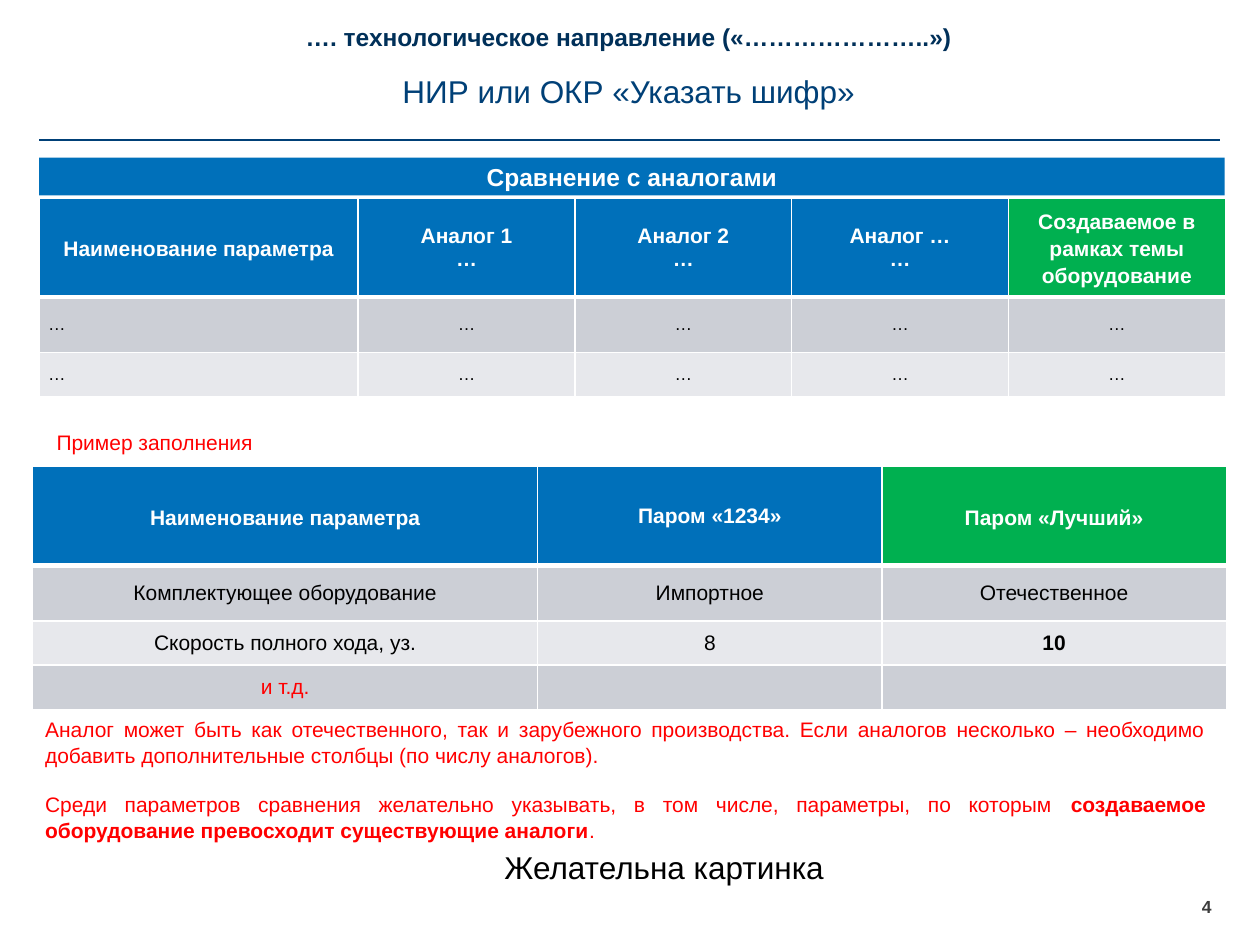
from lxml import etree
from pptx import Presentation
from pptx.dml.color import RGBColor
from pptx.enum.shapes import MSO_CONNECTOR, MSO_SHAPE
from pptx.enum.text import MSO_ANCHOR, PP_ALIGN
from pptx.oxml.ns import qn
from pptx.util import Cm, Pt

LEFT, MID, FULL = PP_ALIGN.LEFT, PP_ALIGN.CENTER, PP_ALIGN.JUSTIFY
TOP, CORE, BASE = MSO_ANCHOR.TOP, MSO_ANCHOR.MIDDLE, MSO_ANCHOR.BOTTOM
FONT = "Arial"
HUES = {
    "navy": "003059", "deep": "004077", "blue": "0070BA", "green": "00B050",
    "dark": "CCCFD6", "pale": "E7E8EC", "red": "FF0000", "grey": "3C3C3C",
    "black": "000000", "white": "FFFFFF",
}

# Content: a text is a list of paragraphs, a paragraph a list of (words, bold)
THEME = "…. технологическое направление («…………………..»)"
TITLE = "НИР или ОКР «Указать шифр»"
BANNER = "Сравнение с аналогами"
SAMPLE = "Пример заполнения"
NOTES = [
    [("Аналог может быть как отечественного, так и зарубежного производства. "
      "Если аналогов несколько – необходимо добавить дополнительные столбцы "
      "(по числу аналогов).", False)],
    [("Среди параметров сравнения желательно указывать, в том числе, "
      "параметры, по которым ", False),
     ("создаваемое оборудование превосходит существующие аналоги", True),
     (".", False)],
]
WISH = "Желательна картинка"
PAGE = "4"

PEERS = {
    "spot": (0.79, 3.99), "cols": [6.43] + [4.37] * 4,
    "rows": [2, 1.12, 0.89], "size": 10, "first": FULL,
    "cells": [
        ["Наименование параметра", "Аналог 1\n…", "Аналог 2\n…", "Аналог …\n…",
         "Создаваемое в рамках темы оборудование"],
        ["…"] * 5,
        ["…"] * 5,
    ],
}
FERRY = {
    "spot": (0.66, 9.4), "cols": [10.18, 6.94, 6.94],
    "rows": [2, 1.12, 0.89, 0.89], "size": 12, "first": MID,
    "cells": [
        ["Наименование параметра", "Паром «1234»", "Паром «Лучший»"],
        ["Комплектующее оборудование", "Импортное", "Отечественное"],
        ["Скорость полного хода, уз.", "8", "10"],
        ["и т.д.", "", ""],
    ],
}
BOLD = {"10"}
TINT = {"и т.д.": "red"}


def hue(name):
    return RGBColor.from_string(HUES[name])


def write(frame, paras, size, tone, align, gap=0):
    """Fill a text frame run by run; return its paragraphs."""
    for i, runs in enumerate(paras):
        para = frame.paragraphs[0] if i == 0 else frame.add_paragraph()
        para.alignment = align
        if i and gap:
            para.space_before = Pt(gap)
        for words, bold in runs:
            run = para.add_run()
            run.text = words
            font = run.font
            font.name, font.size, font.bold = FONT, Pt(size), bold
            font.color.rgb = hue(tone)
    return frame.paragraphs


def label(area, paras, size, tone, align, bold=False, anchor=TOP,
          tight=False, gap=0):
    """Add a wrapped text box."""
    frame = slide.shapes.add_textbox(*map(Cm, area)).text_frame
    frame.word_wrap = True
    frame.vertical_anchor = anchor
    if tight:
        frame.margin_left = frame.margin_right = 0
        frame.margin_top = frame.margin_bottom = 0
    if isinstance(paras, str):
        paras = [[(paras, bold)]]
    write(frame, paras, size, tone, align, gap)


def edge(cell, top, base):
    """Draw white borders, with given top and bottom widths in points."""
    props = cell._tc.get_or_add_tcPr()
    sides = [("lnL", 1), ("lnR", 1), ("lnT", top), ("lnB", base)]
    for i, (tag, width) in enumerate(sides):
        line = etree.Element(qn("a:" + tag), w=str(Pt(width)))
        fill = etree.SubElement(line, qn("a:solidFill"))
        etree.SubElement(fill, qn("a:srgbClr"), val=HUES["white"])
        props.insert(i, line)


def grid(data):
    """Add a table: a header with a green last column, then banded rows."""
    cols, rows = data["cols"], data["rows"]
    area = (*data["spot"], sum(cols), sum(rows))
    table = slide.shapes.add_table(
        len(rows), len(cols), *map(Cm, area)).table
    for col, width in zip(table.columns, cols):
        col.width = Cm(width)
    last = len(cols) - 1
    for r, texts in enumerate(data["cells"]):
        table.rows[r].height = Cm(rows[r])
        head = r == 0
        for c, text in enumerate(texts):
            cell = table.cell(r, c)
            cell.margin_left = cell.margin_right = Cm(0.18)
            cell.margin_top = cell.margin_bottom = 0
            cell.vertical_anchor = CORE
            if head:
                back = "green" if c == last else "blue"
            else:
                back = "dark" if r % 2 else "pale"
            cell.fill.solid()
            cell.fill.fore_color.rgb = hue(back)
            edge(cell, 3 if r == 1 else 1, 3 if head else 1)
            if not text:
                continue
            size = 12 if head else data["size"]
            tone = "white" if head else TINT.get(text, "black")
            align = data["first"] if c == 0 and not head else MID
            bold = head or text in BOLD
            lines = [[(part, bold)] for part in text.split("\n")]
            paras = write(cell.text_frame, lines, size, tone, align)
            if head and c in (0, last):
                paras[0].line_spacing = 1.15
                paras[0].space_after = Pt(10)


deck = Presentation()
deck.slide_width, deck.slide_height = Cm(25.4), Cm(19.05)
slide = deck.slides.add_slide(deck.slide_layouts[6])

# Heading rule and page number
rule = slide.shapes.add_connector(
    MSO_CONNECTOR.STRAIGHT, Cm(0.79), Cm(2.82), Cm(24.59), Cm(2.82))
rule.line.color.rgb = hue("deep")
rule.line.width = Pt(1)
etree.SubElement(rule._element.spPr, qn("a:effectLst"))
label((24.23, 18.06, 0.61, 0.46), PAGE, 10, "grey", LEFT, True, tight=True)

# Banner
bar = slide.shapes.add_shape(
    MSO_SHAPE.RECTANGLE, Cm(0.79), Cm(3.18), Cm(23.9), Cm(0.76))
bar.shadow.inherit = False
bar.fill.solid()
bar.fill.fore_color.rgb = hue("blue")
bar.line.fill.background()
bar.text_frame.vertical_anchor = CORE
write(bar.text_frame, [[(BANNER, True)]], 14, "white", MID)

# Tables and remarks
grid(PEERS)
label((7.04, 16.97, 12.7, 1.02), WISH, 18, "black", MID)
label((0.66, 14.33, 23.9, 2.82), NOTES, 12, "red", FULL, gap=14)
label((0.89, 8.53, 23.9, 0.76), SAMPLE, 12, "red", FULL)
grid(FERRY)

# Headings
label((0.79, 0.3, 23.77, 0.74), THEME, 14, "navy", MID, True, BASE, True)
label((0.76, 1.32, 23.83, 1.02), TITLE, 18, "deep", MID)

deck.save("out.pptx")
